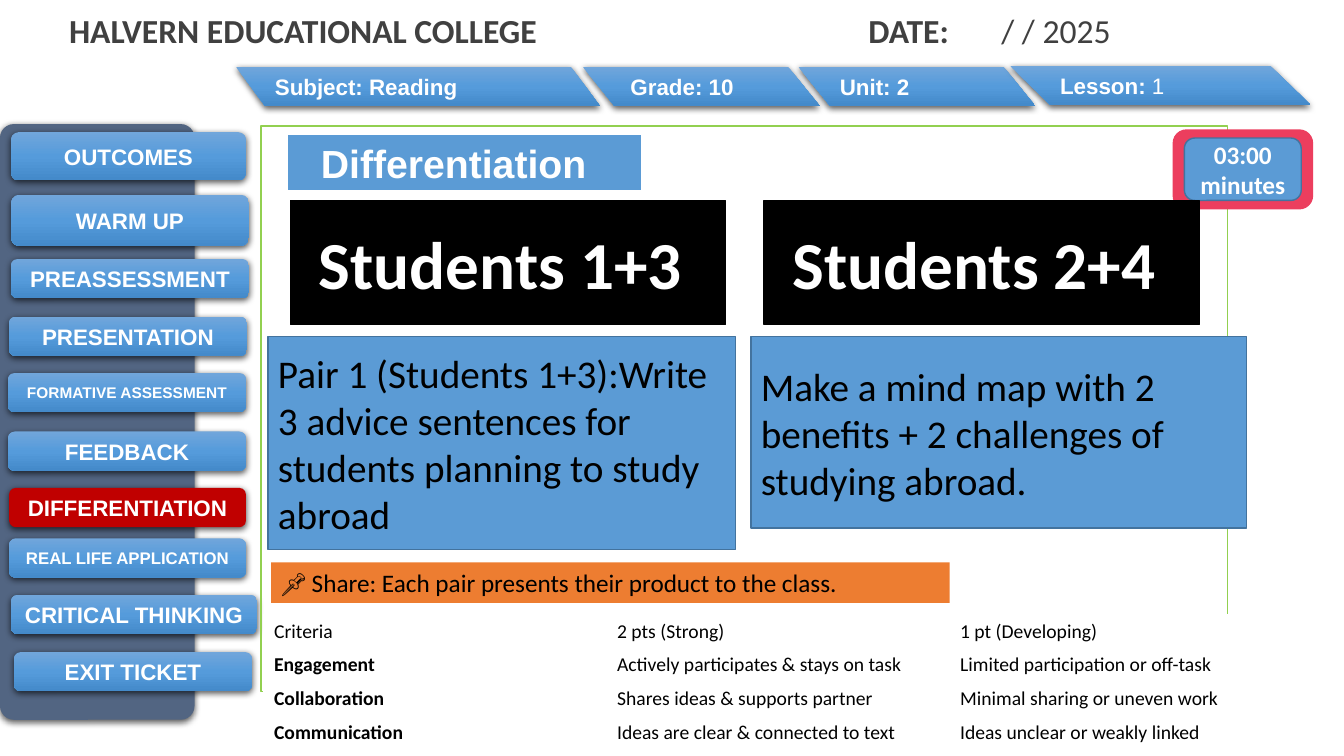
from pptx import Presentation
from pptx import util as u
from pptx.dml import color
from pptx.enum import shapes, text
from pptx.oxml import ns, parse_xml

Pt, RGB, Geo = u.Pt, color.RGBColor, shapes.MSO_SHAPE
Align, Anchor = text.PP_ALIGN, text.MSO_ANCHOR

WHITE = RGB(255, 255, 255)
BLACK = RGB(0, 0, 0)
BLUE = RGB(0x5B, 0x9B, 0xD5)
NAVY = RGB(0x43, 0x73, 0x9E)
SLATE = RGB(0x52, 0x65, 0x82)
RED = RGB(0xC0, 0, 0)
ROSE = RGB(0xEC, 0x3E, 0x5E)
GREEN = RGB(0x92, 0xD0, 0x50)
ORANGE = RGB(0xED, 0x7D, 0x31)
GREY = RGB(0x40, 0x40, 0x40)
GLOSS = ((0, RGB(0x71, 0xA6, 0xDB)), (50, RGB(0x55, 0x9B, 0xDB)),
         (100, RGB(0x44, 0x8A, 0xCA)))

# Text formats
TAB = dict(name="Arial", size=Pt(16), bold=True)
HEAD = dict(name="Calibri", size=Pt(24), bold=True)
TITLE = dict(name="Arial", size=Pt(28), bold=True)
TEAM = dict(name="Calibri", size=Pt(48), bold=True)
CLOCK = dict(name="Calibri", size=Pt(18), bold=True)
TASK = dict(name="Calibri", size=Pt(28), bold=False)
NOTE = dict(name="Calibri", size=Pt(18), bold=False)
CELL = dict(name="Calibri", size=Pt(14), bold=False)

# Sidebar: label, left, top, width, height
MENU = [
    ("OUTCOMES", 7.9, 94.3, 167.8, 34.6),
    ("WARM UP", 7.9, 139, 169.9, 36.7),
    ("PREASSESSMENT", 7.9, 185, 169.9, 28.1),
    ("PRESENTATION", 6.5, 226.1, 169.9, 28.1),
    ("FORMATIVE ASSESSMENT", 5.8, 266.4, 169.9, 28.1),
    ("FEEDBACK", 5.8, 308.2, 169.9, 28.1),
    ("DIFFERENTIATION", 6.5, 348.5, 169.2, 28.1),
    ("REAL LIFE APPLICATION", 6.5, 384.5, 169.2, 28.1),
    ("CRITICAL THINKING", 7.9, 424.8, 175.7, 28.1),
    ("EXIT TICKET", 10.1, 465.8, 169.9, 28.1),
]
SMALL = {"FORMATIVE ASSESSMENT": Pt(11), "REAL LIFE APPLICATION": Pt(12)}
ACTIVE = "DIFFERENTIATION"

# Ribbons: parts, left, top, width, slant
RIBBONS = [
    (["Unit: 2"], 570.2, 47.5, 169.2, 0.067),
    ([" Grade: 10"], 416.2, 47.5, 169.2, 0.067),
    (["Subject: Reading"], 168.5, 47.5, 259.9, 0.04),
    (["Lesson: ", "1"], 721.4, 46.8, 214.6, 0.067),
]
RUBRIC = [
    ("Criteria", "2 pts (Strong)", "1 pt (Developing)"),
    ("Engagement", "Actively participates & stays on task",
     "Limited participation or off-task"),
    ("Collaboration", "Shares ideas & supports partner",
     "Minimal sharing or uneven work"),
    ("Communication", "Ideas are clear & connected to text",
     "Ideas unclear or weakly linked"),
]


def apply(item, form):
    for key, value in form.items():
        setattr(item, key, value)


def write(frame, parts, form, hue, align=Align.LEFT, anchor=Anchor.MIDDLE):
    """Write the parts as runs; those after the first are not bold."""
    apply(frame, dict(word_wrap=True, vertical_anchor=anchor))
    para = frame.paragraphs[0]
    para.alignment = align
    for i, part in enumerate(parts):
        run = para.add_run()
        run.text = part
        apply(run.font, form)
        run.font.bold = form["bold"] and i == 0
        run.font.color.rgb = hue
    return para


def paint(shape, fill, line=None, width=1):
    if fill is None:
        shape.fill.background()
    else:
        shape.fill.solid()
        shape.fill.fore_color.rgb = fill
    if line is None:
        shape.line.fill.background()
    else:
        shape.line.color.rgb = line
        shape.line.width = Pt(width)


def block(home, kind, box, fill, line=None):
    shape = home.add_shape(kind, *map(Pt, box))
    shape.shadow.inherit = False
    paint(shape, fill, line)
    return shape


def shade(shape):
    glow = parse_xml(
        f'<a:outerShdw {ns.nsdecls("a")} blurRad="{Pt(4.5)}" dist="{Pt(1.5)}" '
        'dir="5400000" algn="ctr" rotWithShape="0"><a:srgbClr val="000000">'
        '<a:alpha val="63000"/></a:srgbClr></a:outerShdw>')
    shape.element.spPr.find(ns.qn("a:effectLst")).append(glow)


def gloss(shape):
    stops = "".join(f'<a:gs pos="{pos * 1000}"><a:srgbClr val="{hue}"/></a:gs>'
                    for pos, hue in GLOSS)
    props = shape.element.spPr
    old = props.find(ns.qn("a:solidFill"))
    props.replace(old, parse_xml(
        f'<a:gradFill {ns.nsdecls("a")} rotWithShape="1"><a:gsLst>{stops}'
        '</a:gsLst><a:lin ang="5400000" scaled="0"/></a:gradFill>'))


def button(home, label, *box):
    shape = block(home, Geo.ROUNDED_RECTANGLE, box, RED if label == ACTIVE else BLUE)
    if label != ACTIVE:
        gloss(shape)
    shade(shape)
    form = dict(TAB, size=SMALL.get(label, TAB["size"]))
    write(shape.text_frame, [label], form, WHITE, Align.CENTER)


def ribbon(home, parts, left, top, width, slant):
    shape = block(home, Geo.DOUBLE_WAVE, (left, top, width, 28.1), BLUE)
    shape.adjustments[0], shape.adjustments[1] = 0, slant
    gloss(shape)
    shade(shape)
    write(shape.text_frame, parts, TAB, WHITE)


def header(home):
    box = home.add_textbox(Pt(36.7), Pt(3.6), Pt(912.2), Pt(37.4))
    box.text_frame.margin_left = Pt(12.6)
    para = write(box.text_frame, ["HALVERN EDUCATIONAL COLLEGE\tDATE:", "\t/ / 2025"],
                 HEAD, GREY, anchor=Anchor.TOP)
    tabs = "".join(f'<a:tab pos="{Pt(pos)}" algn="l"/>' for pos in (571, 666))
    para._p.get_or_add_pPr().append(
        parse_xml(f'<a:tabLst {ns.nsdecls("a")}>{tabs}</a:tabLst>'))


def heading(title):
    apply(title, dict(left=Pt(205.2), top=Pt(95.8), width=Pt(253.4), height=Pt(41)))
    paint(title, BLUE, WHITE, 1.5)
    apply(title.text_frame, dict(auto_size=text.MSO_AUTO_SIZE.NONE,
                                 margin_right=Pt(23)))
    write(title.text_frame, ["Differentiation"], TITLE, WHITE, Align.CENTER, Anchor.TOP)


def timer(home):
    group = home.add_group_shape().shapes
    block(group, Geo.ROUNDED_RECTANGLE, (838.1, 92.9, 99.4, 56.2), ROSE, ROSE)
    face = block(group, Geo.ROUNDED_RECTANGLE, (846, 98.6, 83.5, 44.6), BLUE, NAVY)
    write(face.text_frame, ["03:00 minutes"], CLOCK, WHITE, Align.CENTER)


def panel(home, label, box, fill, line, form, hue, align=Align.LEFT):
    shape = block(home, Geo.RECTANGLE, box, fill, line)
    write(shape.text_frame, [label], form, hue, align)


def rubric(home):
    rows, cols = len(RUBRIC), len(RUBRIC[0])
    grid = home.add_table(rows, cols, Pt(188.6), Pt(439.2), Pt(735), Pt(24 * rows)).table
    for r, row in enumerate(RUBRIC):
        for c, label in enumerate(row):
            cell = grid.cell(r, c)
            apply(cell, dict(margin_top=Pt(2), margin_bottom=Pt(2),
                             vertical_anchor=Anchor.MIDDLE))
            cell.fill.solid()
            cell.fill.fore_color.rgb = WHITE
            run = cell.text_frame.paragraphs[0].add_run()
            run.text = label
            apply(run.font, dict(CELL, bold=r > 0 and c == 0))
            run.font.color.rgb = BLACK


def main():
    deck = Presentation()
    apply(deck, dict(slide_width=Pt(960), slide_height=Pt(540)))
    home = deck.slides.add_slide(deck.slide_layouts[5]).shapes

    # Sidebar
    side = block(home, Geo.ROUNDED_RECTANGLE, (0, 88.6, 139, 425.5), SLATE)
    side.adjustments[0] = 0.071
    shade(side)
    for item in MENU:
        button(home, *item)

    # Frame, timer and top band
    block(home, Geo.RECTANGLE, (186.5, 90, 690.5, 403.9), None, GREEN)
    timer(home)
    for item in RIBBONS:
        ribbon(home, *item)
    header(home)
    heading(home.title)

    # Teams and their tasks
    for label, left in (("Students 1+3 ", 207.4), ("Students 2+4 ", 545.8)):
        panel(home, label, (left, 143.3, 311, 88.6), BLACK, BLACK, TEAM, WHITE,
              Align.CENTER)
    panel(home, "Pair 1 (Students 1+3):Write 3 advice sentences for students "
          "planning to study abroad", (191.5, 240.5, 334.1, 151.9), BLUE, NAVY, TASK, BLACK)
    panel(home, "Make a mind map with 2 benefits + 2 challenges of studying abroad.",
          (536.4, 240.5, 354.2, 136.8), BLUE, NAVY, TASK, BLACK)
    panel(home, "📌 Share: Each pair presents their product to the class.",
          (193.7, 401.8, 484.6, 28.8), ORANGE, None, NOTE, BLACK)

    # Scoring table
    rubric(home)
    deck.save("out.pptx")


if __name__ == "__main__":
    main()
